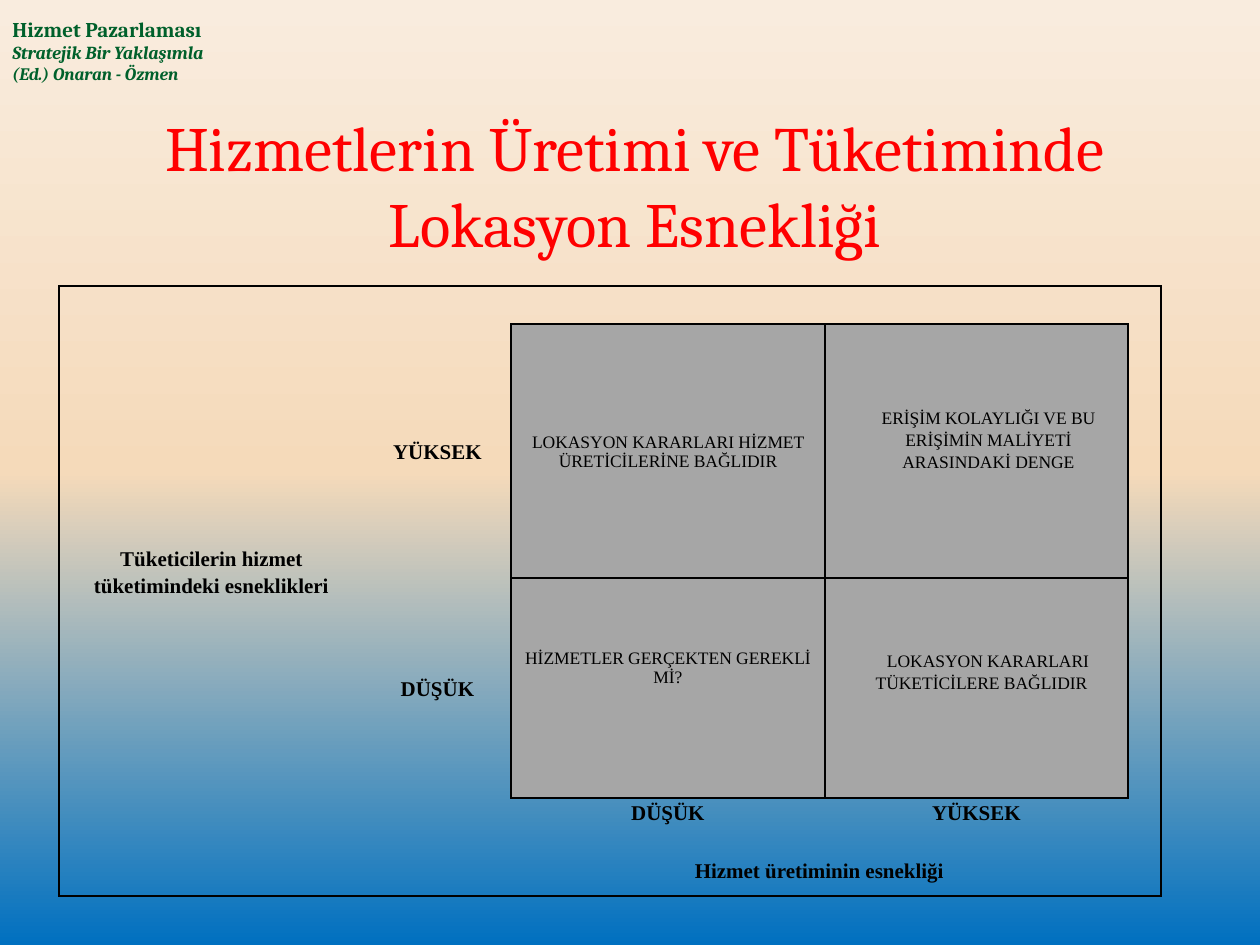
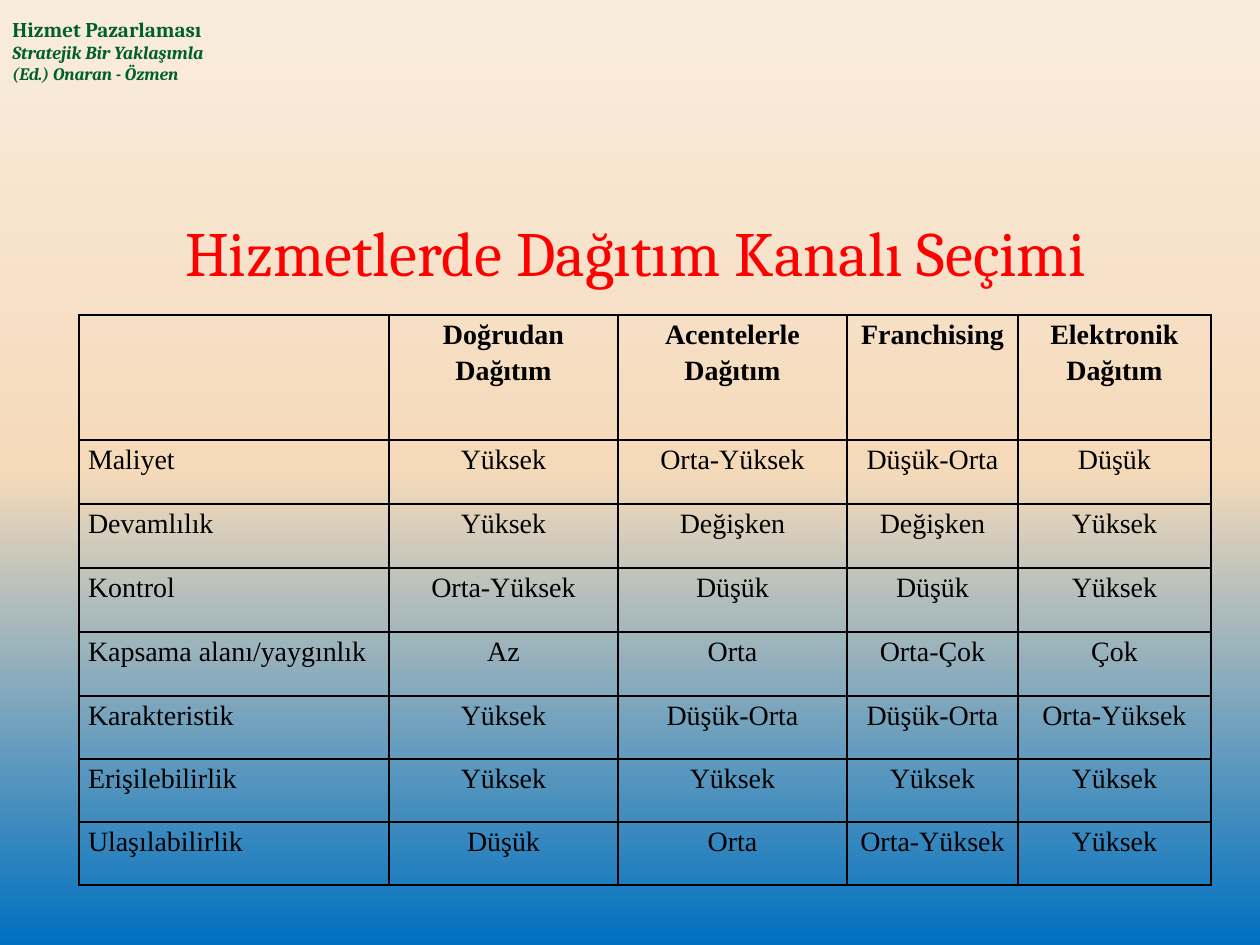
import lxml.etree
import pptx
import pptx.dml.color
import pptx.enum.text
import pptx.oxml.ns
import pptx.util

PX = 914400 // 126
COLORS = {"title": "FF0000", "header": "00602B", "text": "000000", "quadrant": "A6A6A6"}
SKY = [(0, "0070C0"), (50, "F5DABA"), (100, "F9ECDE")]
SIDES = {"a:lnL": (0, -1), "a:lnR": (0, 1), "a:lnT": (-1, 0), "a:lnB": (1, 0)}
ALIGN = pptx.enum.text.PP_ALIGN
ANCHOR = pptx.enum.text.MSO_ANCHOR
qn = pptx.oxml.ns.qn


def write(paragraph, text, size, color, font="Times New Roman", bold=False,
          italic=False, align=ALIGN.LEFT, spacing=1.0):
    paragraph.text = text
    paragraph.alignment = align
    paragraph.line_spacing = spacing
    paragraph.font.name = font
    paragraph.font.size = pptx.util.Pt(size)
    paragraph.font.bold = bold
    paragraph.font.italic = italic
    paragraph.font.color.rgb = pptx.dml.color.RGBColor.from_string(COLORS[color])


def add_grid(slide, left, top, widths, heights, boxed):
    """Table with lines around its edge and around every boxed cell."""
    grid = slide.shapes.add_table(len(heights), len(widths), left * PX, top * PX,
                                  sum(widths) * PX, sum(heights) * PX).table
    grid.first_row = grid.horz_banding = False
    for column, width in zip(grid.columns, widths):
        column.width = width * PX
    for row, height in zip(grid.rows, heights):
        row.height = height * PX
    for r in range(len(heights)):
        for c in range(len(widths)):
            cell = grid.cell(r, c)
            cell.margin_left = cell.margin_right = 9 * PX
            cell.margin_top = cell.margin_bottom = 0
            cell.text_frame.paragraphs[0].font.size = pptx.util.Pt(10)
            properties = cell._tc.get_or_add_tcPr()
            for side, (down, across) in SIDES.items():
                y, x = r + down, c + across
                outside = not (0 <= y < len(heights) and 0 <= x < len(widths))
                line = lxml.etree.SubElement(properties, qn(side), w="12700")
                if outside or (r, c) in boxed or (y, x) in boxed:
                    ink = lxml.etree.SubElement(line, qn("a:solidFill"))
                    lxml.etree.SubElement(ink, qn("a:srgbClr"), val=COLORS["text"])
                else:
                    lxml.etree.SubElement(line, qn("a:noFill"))
            cell.fill.background()
    return grid


deck = pptx.Presentation()
deck.slide_width, deck.slide_height = 1260 * PX, 945 * PX

# Shared background, running from the bottom up
sky = deck.slide_master.background.fill
sky.gradient()
sky.gradient_angle = 90
stops = deck.slide_master.element.find(".//" + qn("a:gsLst"))
for stop in list(stops):
    stops.remove(stop)
for position, color in SKY:
    stop = lxml.etree.SubElement(stops, qn("a:gs"), pos=str(position * 1000))
    lxml.etree.SubElement(stop, qn("a:srgbClr"), val=color)

# Book header and title of each slide
titles = [
    ("Hizmetlerin Üretimi ve Tüketiminde Lokasyon Esnekliği", 108, 139, 1054, 127),
    ("Hizmetlerde Dağıtım Kanalı Seçimi", 168, 139, 935, 156),
]
book_lines = [("Hizmet Pazarlaması", 12, False),
              ("Stratejik Bir Yaklaşımla", 10.5, True),
              ("(Ed.) Onaran - Özmen", 10, True)]
slides = []
for text, left, top, width, height in titles:
    slide = deck.slides.add_slide(deck.slide_layouts[5])
    slides.append(slide)
    book = slide.shapes.add_textbox(0, 10 * PX, 354 * PX, 82 * PX).text_frame
    book.word_wrap = True
    for i, (line, size, italic) in enumerate(book_lines):
        paragraph = book.add_paragraph() if i else book.paragraphs[0]
        write(paragraph, line, size, "header", "Cambria", bold=True, italic=italic)
    title = slide.shapes.title
    title.left, title.top = left * PX, top * PX
    title.width, title.height = width * PX, height * PX
    title.text_frame.auto_size = pptx.enum.text.MSO_AUTO_SIZE.NONE
    title.text_frame.vertical_anchor = ANCHOR.BOTTOM
    write(title.text_frame.paragraphs[0], text, 36, "title", "Cambria", align=ALIGN.CENTER)

# Slide 1: location flexibility matrix
# (row, column): text, line spacing, left margin, top margin, first-line indent
quadrants = {
    (1, 2): ("LOKASYON KARARLARI HİZMET ÜRETİCİLERİNE BAĞLIDIR", 1.0, 9, 109, 0),
    (1, 3): ("ERİŞİM KOLAYLIĞI VE BU ERİŞİMİN MALİYETİ ARASINDAKİ DENGE", 1.15, 33, 82, 0),
    (2, 2): ("HİZMETLER GERÇEKTEN GEREKLİ Mİ?", 1.0, 9, 71, 0),
    (2, 3): ("LOKASYON KARARLARI TÜKETİCİLERE BAĞLIDIR", 1.15, 19, 71, 13),
}
axis_labels = {
    (0, 0): ("Tüketicilerin hizmet tüketimindeki esneklikleri", ANCHOR.MIDDLE),
    (1, 1): ("YÜKSEK", ANCHOR.MIDDLE),
    (2, 1): ("DÜŞÜK", ANCHOR.MIDDLE),
    (3, 2): ("DÜŞÜK", ANCHOR.TOP),
    (3, 3): ("YÜKSEK", ANCHOR.TOP),
    (4, 2): ("Hizmet üretiminin esnekliği", ANCHOR.TOP),
}
matrix = add_grid(slides[0], 59, 286, [305, 147, 314, 303, 33],
                  [38, 254, 220, 53, 40], quadrants)
matrix.cell(0, 0).merge(matrix.cell(3, 0))
matrix.cell(4, 2).merge(matrix.cell(4, 3))
for place, (text, anchor) in axis_labels.items():
    cell = matrix.cell(*place)
    cell.vertical_anchor = anchor
    write(cell.text_frame.paragraphs[0], text, 12, "text", bold=True,
          align=ALIGN.CENTER, spacing=1.15)
for place, (text, spacing, left, top, indent) in quadrants.items():
    cell = matrix.cell(*place)
    cell.margin_left, cell.margin_top = left * PX, top * PX
    cell.fill.solid()
    cell.fill.fore_color.rgb = pptx.dml.color.RGBColor.from_string(COLORS["quadrant"])
    paragraph = cell.text_frame.paragraphs[0]
    write(paragraph, text, 10, "text", align=ALIGN.CENTER, spacing=spacing)
    if indent:
        paragraph._p.get_or_add_pPr().set("indent", str(indent * PX))

# Slide 2: distribution channel comparison
channels = [
    ["", "Doğrudan Dağıtım", "Acentelerle Dağıtım", "Franchising", "Elektronik Dağıtım"],
    ["Maliyet", "Yüksek", "Orta-Yüksek", "Düşük-Orta", "Düşük"],
    ["Devamlılık", "Yüksek", "Değişken", "Değişken", "Yüksek"],
    ["Kontrol", "Orta-Yüksek", "Düşük", "Düşük", "Yüksek"],
    ["Kapsama alanı/yaygınlık", "Az", "Orta", "Orta-Çok", "Çok"],
    ["Karakteristik", "Yüksek", "Düşük-Orta", "Düşük-Orta", "Orta-Yüksek"],
    ["Erişilebilirlik", "Yüksek", "Yüksek", "Yüksek", "Yüksek"],
    ["Ulaşılabilirlik", "Düşük", "Orta", "Orta-Yüksek", "Yüksek"],
]
every_cell = {(r, c) for r in range(8) for c in range(5)}
comparison = add_grid(slides[1], 79, 315, [310, 229, 229, 171, 193],
                      [125] + [64] * 4 + [63] * 3, every_cell)
for r, row in enumerate(channels):
    for c, text in enumerate(row):
        if text:
            write(comparison.cell(r, c).text_frame.paragraphs[0], text, 16, "text",
                  bold=r == 0, align=ALIGN.CENTER if c else ALIGN.JUSTIFY, spacing=1.15)

deck.save("out.pptx")
